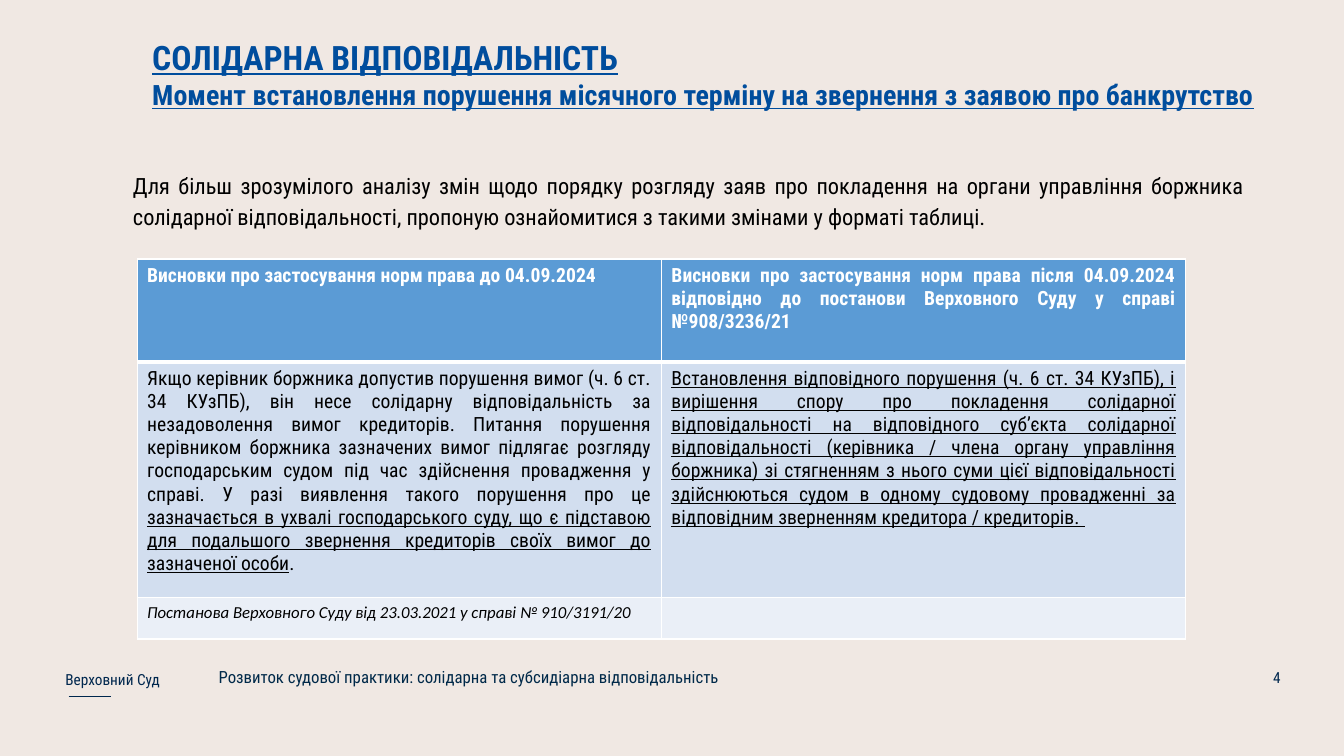
from lxml.etree import SubElement
from pptx import Presentation
from pptx.dml.color import RGBColor
from pptx.enum.shapes import MSO_CONNECTOR
from pptx.enum.text import MSO_ANCHOR as Anchor, MSO_AUTO_SIZE as AutoSize, PP_ALIGN as Align
from pptx.oxml.ns import qn
from pptx.util import Emu, Pt

PX = 9144  # 100 px to the inch
NAVY, BLUE, BLACK, WHITE = "00274E", "004D9D", "000000", "FFFFFF"


def px(length):
    return Emu(length * PX)


def color(hex_string):
    return RGBColor.from_string(hex_string)


def write(paragraph, text, size=14, ink=BLACK, font="Roboto Condensed", bold=False,
          italic=False, underline=False, align=Align.LEFT, spacing=None, before=0, after=0):
    """Add a run to the paragraph and set the format of both."""
    run = paragraph.add_run()
    run.text = text
    run.font.size, run.font.name = Pt(size), font
    run.font.bold, run.font.italic, run.font.underline = bold, italic, underline
    run.font.color.rgb = color(ink)
    paragraph.alignment = align
    paragraph.line_spacing = spacing
    paragraph.space_before, paragraph.space_after = Pt(before), Pt(after)


class CourtSlide:
    def __init__(self, deck, background):
        self.slide = deck.slides.add_slide(deck.slide_layouts[5])
        self.slide.background.fill.solid()
        self.slide.background.fill.fore_color.rgb = color(background)

    def title(self, box, lines):
        heading = self.slide.shapes.title
        heading.left, heading.top, heading.width, heading.height = map(px, box)
        frame = heading.text_frame
        frame.word_wrap, frame.auto_size = True, AutoSize.NONE
        frame.vertical_anchor = Anchor.TOP
        for index, (text, size) in enumerate(lines):
            paragraph = frame.add_paragraph() if index else frame.paragraphs[0]
            write(paragraph, text, size=size, ink=BLUE, bold=True, underline=True)

    def text(self, box, text, anchor=Anchor.TOP, **style):
        frame = self.slide.shapes.add_textbox(*map(px, box)).text_frame
        frame.word_wrap = True
        frame.vertical_anchor = anchor
        write(frame.paragraphs[0], text, **style)

    def line(self, start, end, ink, weight):
        rule = self.slide.shapes.add_connector(
            MSO_CONNECTOR.STRAIGHT, *map(px, start + end))
        rule.line.color.rgb, rule.line.width = color(ink), Pt(weight)
        SubElement(rule._element.spPr, qn("a:effectLst"))

    def borders(self, cell, bottom):
        for side, weight in (("L", 1), ("R", 1), ("T", 1), ("B", bottom)):
            edge = SubElement(cell._tc.get_or_add_tcPr(), qn(f"a:ln{side}"), w=str(Pt(weight)))
            SubElement(SubElement(edge, qn("a:solidFill")), qn("a:srgbClr"), val=WHITE)

    def table(self, origin, widths, heights, fills, rows):
        """Each cell is a list of (text, format) runs."""
        box = (*origin, sum(widths), sum(heights))
        grid = self.slide.shapes.add_table(len(rows), len(widths), *map(px, box)).table
        for column, width in zip(grid.columns, widths):
            column.width = px(width)
        for r, (height, fill, row) in enumerate(zip(heights, fills, rows)):
            grid.rows[r].height = px(height)
            for c, runs in enumerate(row):
                cell = grid.cell(r, c)
                self.borders(cell, bottom=1 if r else 3)
                cell.fill.solid()
                cell.fill.fore_color.rgb = color(fill)
                for text, style in runs:
                    write(cell.text_frame.paragraphs[0], text, **style)


def main():
    deck = Presentation()
    deck.slide_width, deck.slide_height = px(1333), px(750)
    page = CourtSlide(deck, "F0E8E3")

    page.line((68, 691), (110, 691), NAVY, 1.12)
    page.text((55, 653, 144, 40), "Верховний Суд", anchor=Anchor.MIDDLE,
              size=10.9, ink=NAVY, spacing=1.14)
    page.title((141, 32, 1165, 84), [
        ("СОЛІДАРНА ВІДПОВІДАЛЬНІСТЬ", 24),
        ("Момент встановлення порушення місячного терміну на звернення "
         "з заявою про банкрутство", 20),
    ])
    page.text((207, 659, 845, 36),
              "Розвиток судової практики: солідарна та субсидіарна відповідальність",
              size=12, ink="002949", align=Align.JUSTIFY, spacing=0.9, before=11)
    page.text((122, 162, 1122, 160),
              "Для більш зрозумілого аналізу змін щодо порядку розгляду заяв про покладення "
              "на органи управління боржника солідарної відповідальності, пропоную "
              "ознайомитися з такими змінами у форматі таблиці.",
              size=16, align=Align.JUSTIFY, spacing=1.15, after=10)
    page.text((980, 652, 300, 40), "4", anchor=Anchor.MIDDLE,
              size=10.9, ink=NAVY, align=Align.RIGHT)

    header = dict(ink=WHITE, bold=True)
    body = dict(align=Align.JUSTIFY)
    stressed = dict(body, underline=True)
    source = dict(size=12, font="Calibri", italic=True)
    page.table((136, 257), (520, 520), (102, 234, 41), ("5B9BD5", "D2DEEF", "EAEFF7"), [
        [
            [("Висновки про застосування норм права до 04.09.2024", header)],
            [("Висновки про застосування норм права після 04.09.2024 відповідно до "
              "постанови Верховного Суду у справі №908/3236/21",
              dict(header, align=Align.JUSTIFY))],
        ],
        [
            [("Якщо керівник боржника допустив порушення вимог (ч. 6 ст. 34 КУзПБ), він несе "
              "солідарну відповідальність за незадоволення вимог кредиторів. Питання "
              "порушення керівником боржника зазначених вимог підлягає розгляду "
              "господарським судом під час здійснення провадження у справі. У разі "
              "виявлення такого порушення про це ", body),
             ("зазначається в ухвалі господарського суду, що є підставою для подальшого "
              "звернення кредиторів своїх вимог до зазначеної особи", stressed),
             (".", body)],
            [("Встановлення відповідного порушення (ч. 6 ст. 34 КУзПБ), і вирішення спору про "
              "покладення солідарної відповідальності на відповідного суб’єкта солідарної "
              "відповідальності (керівника / члена органу управління боржника) зі стягненням "
              "з нього суми цієї відповідальності здійснюються судом в одному судовому "
              "провадженні за відповідним зверненням кредитора / кредиторів. ", stressed)],
        ],
        [
            [("Постанова Верховного Суду від 23.03.2021 у справі № 910/3191/20", source)],
            [],
        ],
    ])
    deck.save("out.pptx")


if __name__ == "__main__":
    main()
